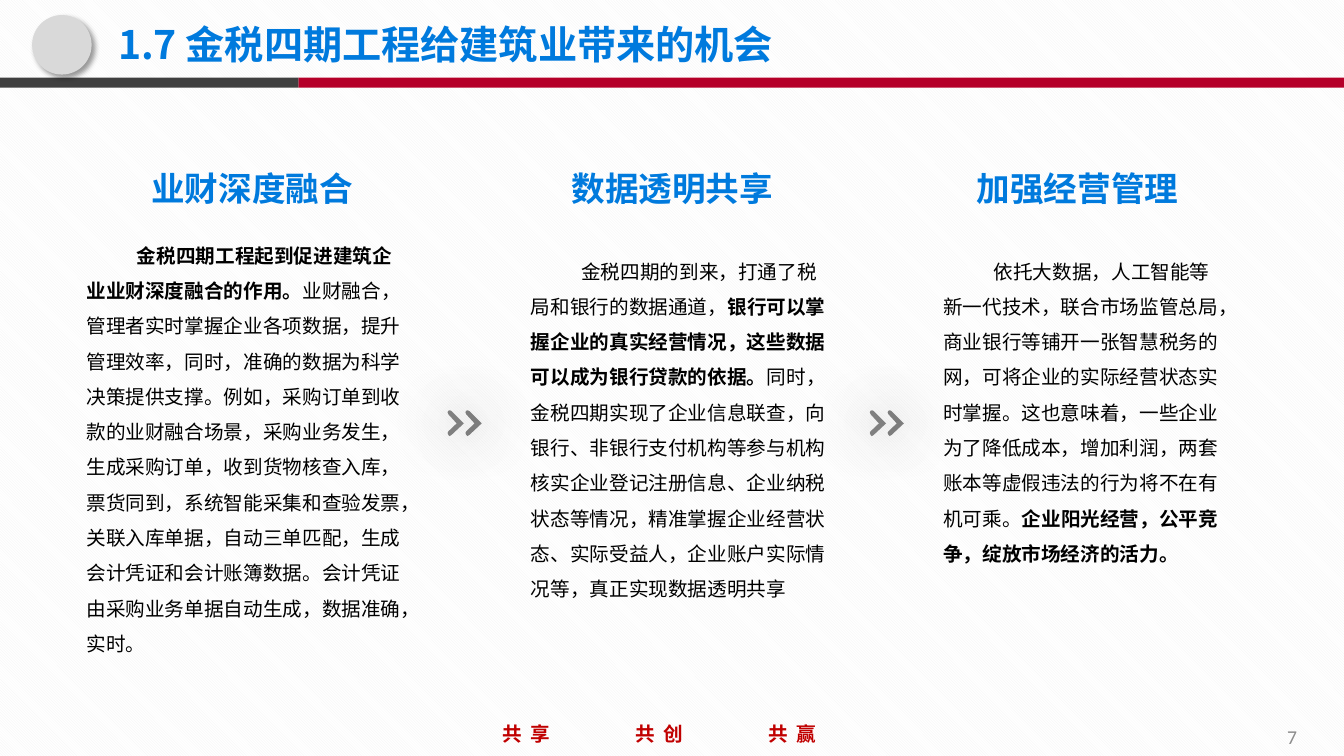
from lxml import etree
from pptx import Presentation
from pptx import util as u
from pptx.dml.color import RGBColor
from pptx.enum import dml, shapes, text
from pptx.oxml.ns import qn

SANS = "Noto Sans CJK SC"
BLUE = "007ADD"
CHEVRON = [(5, 65), (2, 62), (0, 57), (2, 53), (23, 33), (2, 10),
           (0, 5), (2, 1), (6, 0), (10, 2), (41, 33), (10, 62)]

COLUMNS = [
    ("业财深度融合", 3.56, (1.93, 5.72, 8.66, 11.02), [
        ("金税四期工程起到促进建筑企业业财深度融合的作用。", True),
        ("业财融合，管理者实时掌握企业各项数据，提升管理效率，同时，准确的数据为科学决策提供支撑。"
         "例如，采购订单到收款的业财融合场景，采购业务发生，生成采购订单，收到货物核查入库，"
         "票货同到，系统智能采集和查验发票，关联入库单据，自动三单匹配，生成会计凭证和会计账簿数据。"
         "会计凭证由采购业务单据自动生成，数据准确，实时。", False)]),
    ("数据透明共享", 14.15, (13.13, 6.12, 8.2, 9.22), [
        ("金税四期的到来，打通了税局和银行的数据通道，", False),
        ("银行可以掌握企业的真实经营情况，这些数据可以成为银行贷款的依据。", True),
        ("同时，金税四期实现了企业信息联查，向银行、非银行支付机构等参与机构核实企业登记注册信息、"
         "企业纳税状态等情况，精准掌握企业经营状态、实际受益人，企业账户实际情况等，"
         "真正实现数据透明共享", False)]),
    ("加强经营管理", 24.36, (23.52, 6.12, 7.44, 8.33), [
        ("依托大数据，人工智能等新一代技术，联合市场监管总局，商业银行等铺开一张智慧税务的网，"
         "可将企业的实际经营状态实时掌握。这也意味着，一些企业为了降低成本，增加利润，"
         "两套账本等虚假违法的行为将不在有机可乘。", False),
        ("企业阳光经营，公平竞争，绽放市场经济的活力。", True)]),
]


def paint(color, value):
    color.rgb = RGBColor.from_string(value)


class Board:
    def __init__(self, page):
        self.page = page

    def background(self, front, back):
        fill = self.page.background.fill
        fill.patterned()
        fill.pattern = dml.MSO_PATTERN.LIGHT_DOWNWARD_DIAGONAL
        paint(fill.fore_color, front)
        paint(fill.back_color, back)

    def span(self, para, words, size, color, bold=False, font=SANS, spacing=0):
        span = para.add_run()
        span.text = words
        span.font.size = u.Pt(size)
        span.font.bold = bold
        paint(span.font.color, color)
        span.font.name = font
        props = span.font._element
        etree.SubElement(props, qn("a:ea"), typeface=font)
        if spacing:
            props.set("spc", str(spacing * 100))

    def title(self, place, words):
        box = self.page.shapes.title
        box.left, box.top, box.width, box.height = map(u.Cm, place)
        frame = box.text_frame
        frame.auto_size = text.MSO_AUTO_SIZE.NONE
        frame.vertical_anchor = text.MSO_ANCHOR.MIDDLE
        para = frame.paragraphs[0]
        para.alignment = text.PP_ALIGN.LEFT
        self.span(para, words, 28, BLUE, True)

    def text_box(self, place, align=text.PP_ALIGN.LEFT, wrap=True, grow=True):
        frame = self.page.shapes.add_textbox(*map(u.Cm, place)).text_frame
        frame.word_wrap = wrap
        if grow:
            frame.auto_size = text.MSO_AUTO_SIZE.SHAPE_TO_FIT_TEXT
        else:
            frame.vertical_anchor = text.MSO_ANCHOR.MIDDLE
        para = frame.paragraphs[0]
        para.alignment = align
        return para

    def heading(self, left, words):
        para = self.text_box((left, 4.11, 5.59, 1.27), text.PP_ALIGN.CENTER, wrap=False)
        self.span(para, words, 24, BLUE, True)

    def body(self, place, pieces):
        para = self.text_box(place)
        para.line_spacing = 1.5
        para._p.get_or_add_pPr().set("indent", str(u.Cm(1.27)))
        for words, bold in pieces:
            self.span(para, words, 14, "000000", bold)

    def slogan(self, place, words, step):
        para = self.text_box(place)
        tabs = etree.SubElement(para._p.get_or_add_pPr(), qn("a:tabLst"))
        for number in range(1, len(words)):
            etree.SubElement(tabs, qn("a:tab"), pos=str(u.Cm(step * number)), algn="l")
        self.span(para, "\t".join(words), 14, "C00000", True, spacing=6)

    def finish(self, shape, color, shadow=None):
        shape.fill.solid()
        paint(shape.fill.fore_color, color)
        shape.line.fill.background()
        shape.shadow.inherit = False
        if shadow:
            alpha, blur, distance, angle = shadow
            effects = shape._element.spPr.find(qn("a:effectLst"))
            outer = etree.SubElement(
                effects, qn("a:outerShdw"), blurRad=str(u.Pt(blur)), dist=str(u.Pt(distance)),
                dir=str(angle * 60000), algn="ctr", rotWithShape="0")
            tone = etree.SubElement(outer, qn("a:srgbClr"), val="000000")
            etree.SubElement(tone, qn("a:alpha"), val=str(alpha * 1000))

    def shape(self, kind, place, color, shadow=None):
        self.finish(self.page.shapes.add_shape(kind, *map(u.Cm, place)), color, shadow)

    def chevron(self, left, top):
        builder = self.page.shapes.build_freeform(*CHEVRON[0], scale=float(u.Cm(0.01)))
        builder.add_line_segments(CHEVRON[1:], close=True)
        self.finish(builder.convert_to_shape(u.Cm(left), u.Cm(top)), "808080", (81, 47, 0, 0))


def main():
    deck = Presentation()
    deck.slide_width, deck.slide_height = u.Cm(33.87), u.Cm(19.05)
    board = Board(deck.slides.add_slide(deck.slide_layouts[5]))
    board.background("F2F2F2", "FFFFFF")

    board.slogan((12.42, 18.06, 9.91, 0.89), ["共享", "共创", "共赢"], 3.35)
    rectangle = shapes.MSO_SHAPE.RECTANGLE
    board.shape(rectangle, (7.52, 1.96, 26.35, 0.25), "B50029")
    board.shape(rectangle, (0, 1.96, 7.52, 0.25), "404040")
    board.shape(shapes.MSO_SHAPE.OVAL, (0.81, 0.38, 1.5, 1.5), "D9D9D9", (40, 4, 3, 45))
    board.title((2.72, 0.3, 25.22, 1.6), "1.7 金税四期工程给建筑业带来的机会")

    number = board.text_box((25.04, 18.06, 7.9, 1.02), text.PP_ALIGN.RIGHT, grow=False)
    board.span(number, "7", 14, "8C8C8C", font="Calibri")

    for name, left, place, pieces in COLUMNS:
        board.heading(left, name)
        board.body(place, pieces)
    for left in (11.28, 21.92):
        for shift in (0.45, 0):
            board.chevron(left + shift, 10.34)

    deck.save("out.pptx")


if __name__ == "__main__":
    main()
